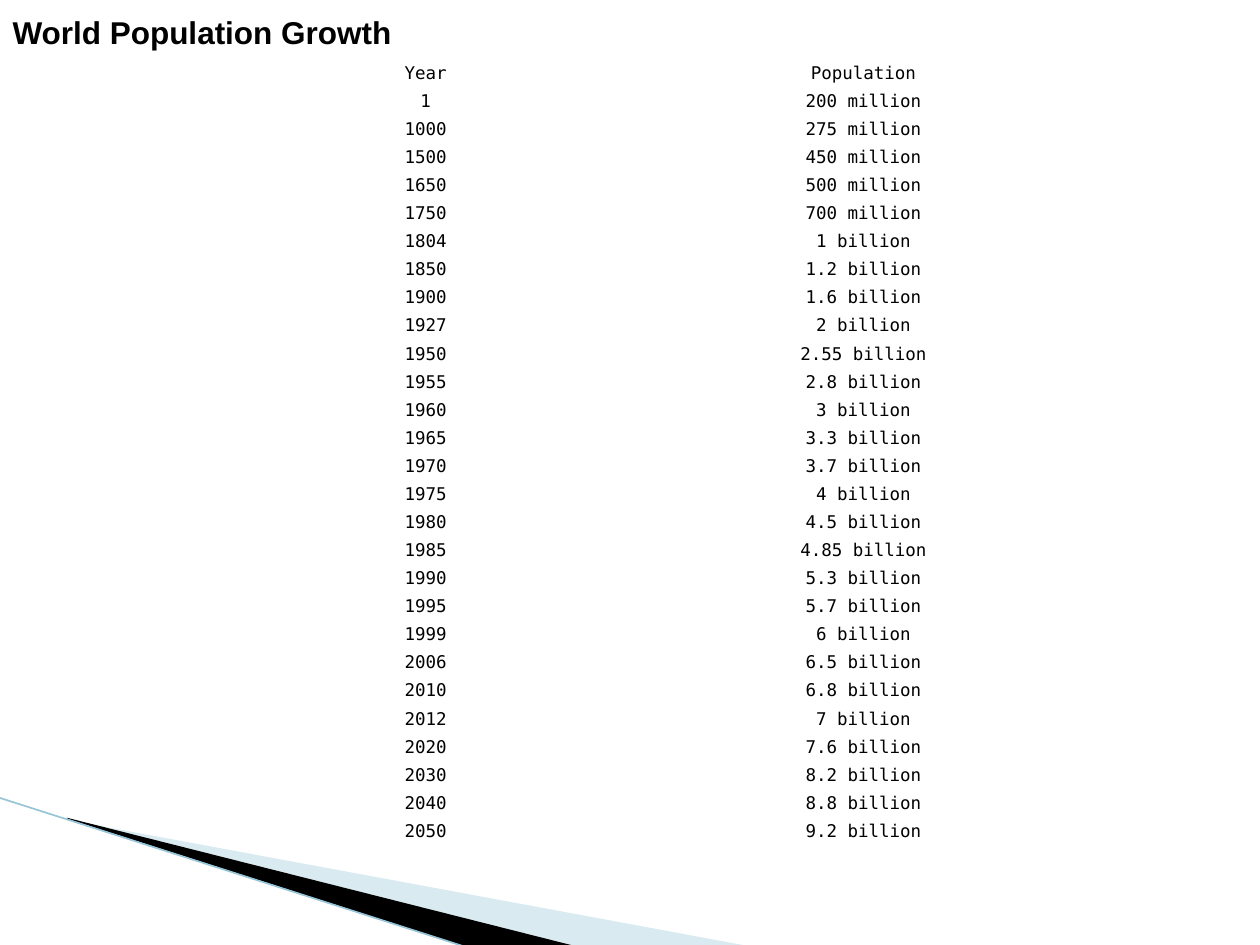
import pptx
import pptx.util
import pptx.dml.color
import pptx.enum.shapes
import pptx.enum.text
import pptx.oxml
import pptx.oxml.ns

Pt = pptx.util.Pt
PLAIN = "{2D5ABB26-0587-4C30-8999-92F81FD0307C}"
ROWS = [
    ("Year", "Population"),
    ("1", "200 million"),
    ("1000", "275 million"),
    ("1500", "450 million"),
    ("1650", "500 million"),
    ("1750", "700 million"),
    ("1804", "1 billion"),
    ("1850", "1.2 billion"),
    ("1900", "1.6 billion"),
    ("1927", "2 billion"),
    ("1950", "2.55 billion"),
    ("1955", "2.8 billion"),
    ("1960", "3 billion"),
    ("1965", "3.3 billion"),
    ("1970", "3.7 billion"),
    ("1975", "4 billion"),
    ("1980", "4.5 billion"),
    ("1985", "4.85 billion"),
    ("1990", "5.3 billion"),
    ("1995", "5.7 billion"),
    ("1999", "6 billion"),
    ("2006", "6.5 billion"),
    ("2010", "6.8 billion"),
    ("2012", "7 billion"),
    ("2020", "7.6 billion"),
    ("2030", "8.2 billion"),
    ("2040", "8.8 billion"),
    ("2050", "9.2 billion"),
]


def paint(target, color):
    """Give a colour format the colour of a hex string."""
    target.rgb = pptx.dml.color.RGBColor.from_string(color)


def add_run(para, text, font, size, bold=False):
    run = para.add_run()
    run.text = text
    run.font.name = font
    run.font.size = Pt(size)
    run.font.bold = bold
    paint(run.font.color, "000000")


def add_wedge(slide, points, color, alpha=100):
    """Draw a closed outline; alpha is its opacity in percent."""
    first, *rest = [(Pt(x), Pt(y)) for x, y in points]
    maker = slide.shapes.build_freeform(*first)
    maker.add_line_segments(rest, close=True)
    wedge = maker.convert_to_shape()
    wedge.shadow.inherit = False
    wedge.line.fill.background()
    wedge.fill.solid()
    paint(wedge.fill.fore_color, color)
    if alpha < 100:
        tint = wedge.fill._xPr.find(".//" + pptx.oxml.ns.qn("a:srgbClr"))
        pptx.oxml.ns.qn("a:alpha")
        node = pptx.oxml.parse_xml(
            f'<a:alpha {pptx.oxml.ns.nsdecls("a")} val="{alpha * 1000}"/>')
        tint.append(node)


def add_line(slide, start, end, color, width):
    line = slide.shapes.add_connector(
        pptx.enum.shapes.MSO_CONNECTOR.STRAIGHT,
        *(Pt(value) for value in start + end))
    paint(line.line.color, color)
    line.line.width = Pt(width)
    line._element.spPr.append(pptx.oxml.parse_xml(
        f'<a:effectLst {pptx.oxml.ns.nsdecls("a")}/>'))


def fill_cell(cell, text):
    cell.fill.background()
    cell.margin_left = cell.margin_right = 0
    cell.margin_top = cell.margin_bottom = 0
    cell.vertical_anchor = pptx.enum.text.MSO_ANCHOR.MIDDLE
    para = cell.text_frame.paragraphs[0]
    para.alignment = pptx.enum.text.PP_ALIGN.CENTER
    add_run(para, text, "DejaVu Sans Mono", 10)


def add_grid(slide, rows, left, top, width, height):
    table = slide.shapes.add_table(
        len(rows), len(rows[0]),
        Pt(left), Pt(top), Pt(width), Pt(height)).table
    table.first_row = table.horz_banding = False
    table._tbl.tblPr.find(pptx.oxml.ns.qn("a:tableStyleId")).text = PLAIN
    for r, row in enumerate(rows):
        for c, text in enumerate(row):
            fill_cell(table.cell(r, c), text)


def set_title(slide, text):
    title = slide.shapes.title
    title.left, title.top = Pt(0), Pt(0)
    title.width, title.height = Pt(720), Pt(36)
    frame = title.text_frame
    frame.word_wrap = True
    frame.auto_size = pptx.enum.text.MSO_AUTO_SIZE.NONE
    frame.vertical_anchor = pptx.enum.text.MSO_ANCHOR.MIDDLE
    para = frame.paragraphs[0]
    para.alignment = pptx.enum.text.PP_ALIGN.LEFT
    add_run(para, text, "Arial", 18, bold=True)


def main():
    deck = pptx.Presentation()
    deck.slide_width, deck.slide_height = Pt(720), Pt(540)
    slide = deck.slides.add_slide(deck.slide_layouts[5])
    set_title(slide, "World Population Growth")
    add_wedge(slide, [(39.6, 468.72), (428.4, 540.72),
                      (328.32, 540.72), (39.6, 468)], "A0CBDC", 40)
    add_wedge(slide, [(38.16, 467.28), (329.04, 540.72),
                      (267.84, 541.44), (38.88, 468)], "000000")
    add_line(slide, (-0.72, 455.76), (267.12, 541.44), "97C5D8", 0.95)
    add_grid(slide, ROWS, 118.08, 33.84, 500.4, 450)
    deck.save("out.pptx")


if __name__ == "__main__":
    main()
